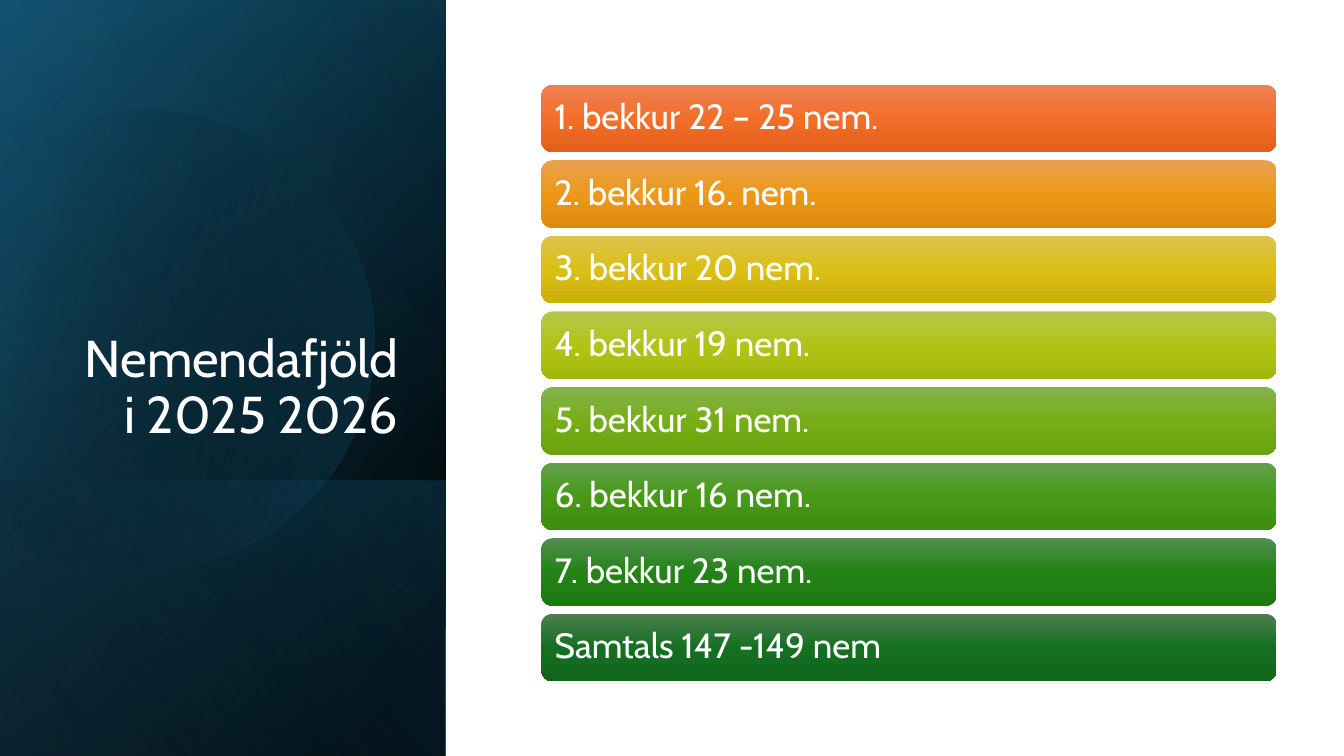
from itertools import pairwise
from math import cos, radians, sin, tan

from lxml.etree import SubElement
from pptx import Presentation
from pptx.dml.color import RGBColor
from pptx.enum.shapes import MSO_SHAPE as Preset
from pptx.enum.text import MSO_ANCHOR as Anchor, PP_ALIGN as Align
from pptx.oxml.ns import qn
from pptx.util import Inches, Pt


def paint_gradient(shape, stops, angle):
    """Fill with (position %, colour, opacity %) stops; no line, no shadow."""
    shape.shadow.inherit = False
    shape.line.fill.background()
    shape.fill.background()
    properties = shape._element.spPr
    empty_fill = properties.find(qn("a:noFill"))
    gradient = SubElement(properties, qn("a:gradFill"), rotWithShape="1")
    properties.replace(empty_fill, gradient)
    stop_list = SubElement(gradient, qn("a:gsLst"))
    for position, colour, opacity in stops:
        stop = SubElement(stop_list, qn("a:gs"), pos=str(position * 1000))
        tint = SubElement(stop, qn("a:srgbClr"), val=colour)
        if opacity < 100:
            SubElement(tint, qn("a:alpha"), val=str(opacity * 1000))
    SubElement(gradient, qn("a:lin"), ang=str(angle * 60000), scaled="0")


def write_text(shape, text, size, align, anchor):
    frame = shape.text_frame
    frame_format = {
        "word_wrap": True, "vertical_anchor": anchor,
        "margin_left": Inches(0.1), "margin_right": Inches(0.1),
    }
    for name, value in frame_format.items():
        setattr(frame, name, value)
    paragraph = frame.paragraphs[0]
    paragraph.alignment = align
    paragraph.line_spacing = 0.9
    run = paragraph.add_run()
    run.text = text
    run.font.name = "Cabin"
    run.font.size = Pt(size)
    run.font.color.rgb = RGBColor.from_string("FFFFFF")


presentation = Presentation()
presentation.slide_width = Inches(13.33)
presentation.slide_height = Inches(7.5)
slide = presentation.slides.add_slide(presentation.slide_layouts[6])
shapes = slide.shapes

# Left panel: turned and mirrored gradient layers, with a disc below the last one
full_panel = (-1.54, 1.54, 7.5, 4.42)
lower_panel = (0.84, 3.93, 2.74, 4.42)
panel_layers = [
    (full_panel, [(8, "000000", 100), (100, "104862", 100)], 50),
    (full_panel, [(0, "000000", 0), (99, "156082", 46)], 30),
    (lower_panel, [(2, "156082", 29), (100, "000000", 30)], 130),
    (full_panel, [(0, "000000", 0), (99, "46B1E1", 11)], 120),
]
for number, (box, stops, angle) in enumerate(panel_layers, start=1):
    if number == len(panel_layers):
        # Each arc takes two Bézier handles and an end point
        centre_x, centre_y, radius = 1.43, 3.34, 2.28
        arc_ends = [radians(degree) for degree in (-118, -90, 0, 90, 150)]
        rim = [(cos(arc_ends[0]), sin(arc_ends[0]))]
        for start, end in pairwise(arc_ends):
            handle = 4 / 3 * tan((end - start) / 4)
            rim += [
                (cos(start) - handle * sin(start), sin(start) + handle * cos(start)),
                (cos(end) + handle * sin(end), sin(end) - handle * cos(end)),
                (cos(end), sin(end)),
            ]
        outline = [(Inches(centre_x + radius * x), Inches(centre_y + radius * y))
                   for x, y in rim]
        builder = shapes.build_freeform(*outline[0])
        builder.add_line_segments(outline[1:], close=True)
        disc = builder.convert_to_shape()
        segments = list(disc._element.iter(qn("a:lnTo")))
        for first, second, last in zip(segments[::3], segments[1::3], segments[2::3]):
            first.tag = qn("a:cubicBezTo")
            for segment in (second, last):
                first.append(segment[0])
                segment.getparent().remove(segment)
        disc.rotation = 343.9
        paint_gradient(disc, [(29, "000000", 0), (100, "156082", 43)], 30)
    layer = shapes.add_shape(Preset.RECTANGLE, *map(Inches, box))
    layer.rotation = 90
    layer._element.spPr.xfrm.set("flipH", "1")
    paint_gradient(layer, stops, angle)

title = shapes.add_textbox(*map(Inches, (0.64, 1.84, 3.41, 2.62)))
write_text(title, "Nemendafjöldi 2025 2026", 37, Align.RIGHT, Anchor.BOTTOM)

# One bar per class, and the total
class_bars = [
    ("1. bekkur 22 – 25 nem.", "ED8257", "F26E29", "E25F1A"),
    ("2. bekkur 16. nem.", "E9A150", "ED9818", "DE890B"),
    ("3. bekkur 20 nem.", "DCC34E", "DBBF15", "CBAF0A"),
    ("4. bekkur 19 nem.", "B6C74E", "B1C416", "A3B60C"),
    ("5. bekkur 31 nem.", "85B34E", "77AE17", "6BA10E"),
    ("6. bekkur 16 nem.", "63A04E", "489917", "3E8D0F"),
    ("7. bekkur 23 nem.", "518E4E", "238316", "1C790F"),
    ("Samtals 147 -149 nem", "4D7E50", "156F21", "0F661B"),
]
first_top, pitch = 0.84, 0.75
for row, (text, top_colour, middle_colour, bottom_colour) in enumerate(class_bars):
    bar = shapes.add_shape(
        Preset.ROUNDED_RECTANGLE, Inches(5.37), Inches(first_top + row * pitch),
        Inches(7.29), Inches(0.67))
    stops = [(0, top_colour, 100), (50, middle_colour, 100), (100, bottom_colour, 100)]
    paint_gradient(bar, stops, 90)
    write_text(bar, text, 25, Align.LEFT, Anchor.MIDDLE)

presentation.save("out.pptx")
